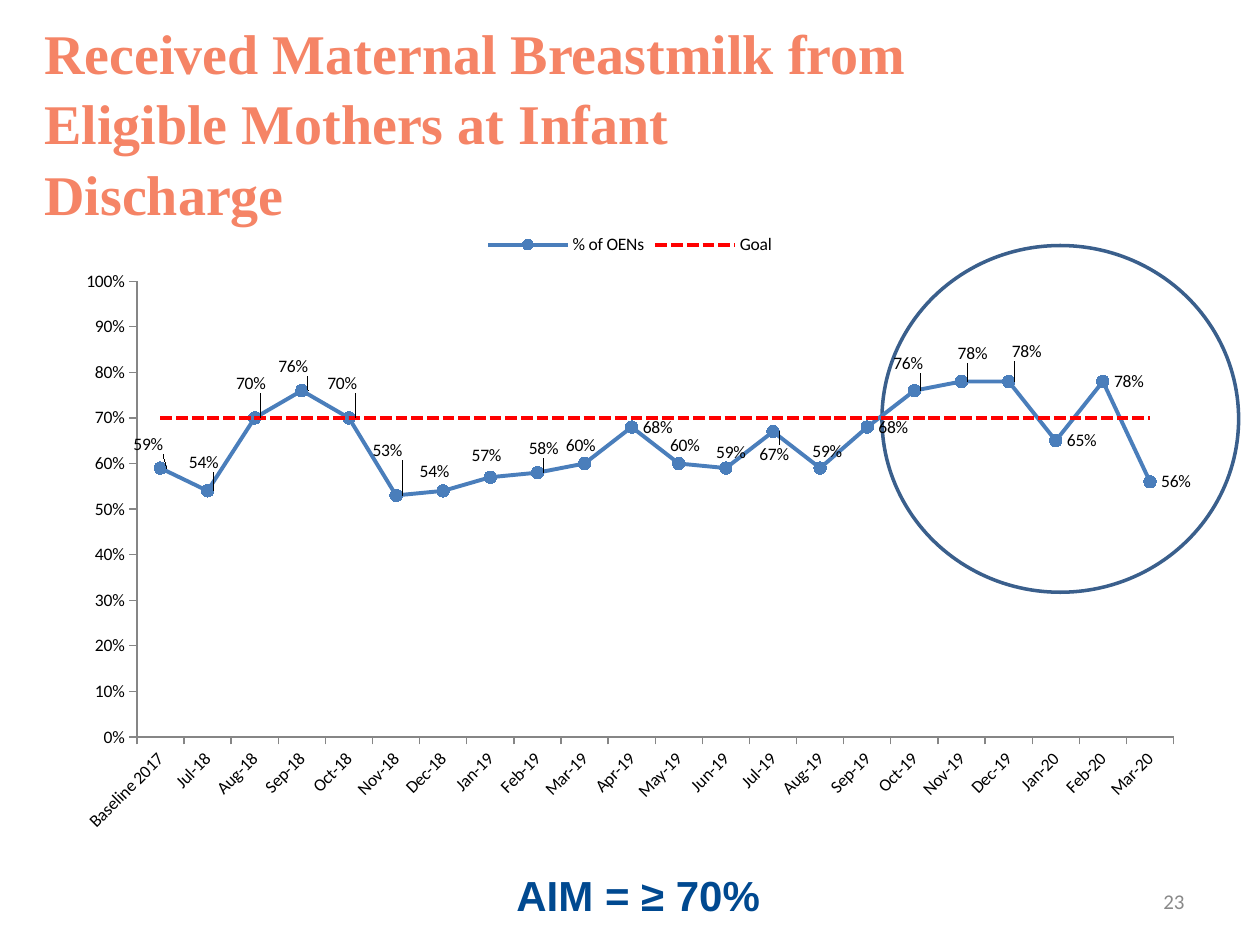
from dataclasses import dataclass

from lxml import etree
from pptx import Presentation
from pptx.chart.data import CategoryChartData
from pptx.dml.color import RGBColor
from pptx.enum.chart import (XL_CHART_TYPE, XL_LABEL_POSITION, XL_LEGEND_POSITION,
                             XL_MARKER_STYLE, XL_TICK_MARK)
from pptx.enum.dml import MSO_LINE
from pptx.enum.shapes import MSO_SHAPE
from pptx.enum.text import MSO_ANCHOR, MSO_AUTO_SIZE, PP_ALIGN
from pptx.oxml.ns import qn
from pptx.util import Cm, Pt

LINE_MARKERS = XL_CHART_TYPE.LINE_MARKERS
LABEL_RIGHT = XL_LABEL_POSITION.RIGHT
LEGEND_TOP = XL_LEGEND_POSITION.TOP
CIRCLE, NO_MARKER = XL_MARKER_STYLE.CIRCLE, XL_MARKER_STYLE.NONE
TICK_OUTSIDE = XL_TICK_MARK.OUTSIDE
DASHED = MSO_LINE.SQUARE_DOT
ELLIPSE = MSO_SHAPE.OVAL
MIDDLE, TOP = MSO_ANCHOR.MIDDLE, MSO_ANCHOR.TOP
LEFT, RIGHT = PP_ALIGN.LEFT, PP_ALIGN.RIGHT
NO_AUTOFIT = MSO_AUTO_SIZE.NONE

COLORS = {"title": "F58466", "aim": "004990", "number": "898989", "ring": "3A5F8C",
          "line": "4A7EBB", "marker": "4F81BD", "goal": "FF0000",
          "axis": "868686", "text": "000000"}

MONTHS = "Jan Feb Mar Apr May Jun Jul Aug Sep Oct Nov Dec".split()
# July 2018 to March 2020
CATEGORIES = ["Baseline 2017"] + [
    f"{MONTHS[index % 12]}-{18 + index // 12}" for index in range(6, 27)]
PERCENTAGES = [59, 54, 70, 76, 70, 53, 54, 57, 58, 60, 68,
               60, 59, 67, 59, 68, 76, 78, 78, 65, 78, 56]
GOAL = 0.7

# Labels moved from their place right of the point: (right, down) in cm
LABEL_SHIFTS = {
    0: (-0.77, -0.48), 1: (-0.6, -0.58), 2: (-0.6, -0.7), 3: (-0.7, -0.48),
    4: (-0.66, -0.7), 5: (-0.7, -0.9), 6: (-0.7, -0.38), 7: (-0.6, -0.44),
    8: (-0.4, -0.48), 9: (-0.6, -0.36), 11: (-0.4, -0.36), 12: (-0.42, -0.32),
    13: (-0.5, 0.46), 14: (-0.38, -0.34), 16: (-0.65, -0.54), 17: (-0.3, -0.56),
    18: (-0.16, -0.6)}


@dataclass
class Box:
    """Position and size in centimetres."""
    left: float
    top: float
    width: float
    height: float

    def lengths(self):
        return Cm(self.left), Cm(self.top), Cm(self.width), Cm(self.height)


@dataclass
class TextStyle:
    font: str
    size: float
    color: str
    bold: bool = False
    alignment: int = LEFT
    anchor: int = TOP
    line_spacing: float = 1.0


CHART_BOX = Box(1.27, 4.45, 22.86, 12.57)
PLOT_BOX = Box(1.49, 1.22, 20.9, 9.19)  # measured inside the chart


def rgb(name: str) -> RGBColor:
    return RGBColor.from_string(COLORS[name])


def write_text(shape, text: str, style: TextStyle) -> None:
    frame = shape.text_frame
    frame.text = text
    frame.word_wrap = True
    frame.auto_size = NO_AUTOFIT
    frame.vertical_anchor = style.anchor
    paragraph = frame.paragraphs[0]
    paragraph.alignment = style.alignment
    paragraph.line_spacing = style.line_spacing
    font = paragraph.runs[0].font
    font.name, font.size, font.bold = style.font, Pt(style.size), style.bold
    font.color.rgb = rgb(style.color)


def add_text(slide, box: Box, text: str, style: TextStyle) -> None:
    write_text(slide.shapes.add_textbox(*box.lengths()), text, style)


def make_layout(**settings) -> etree.Element:
    """Build a manual chart layout from its settings, in schema order."""
    layout = etree.Element(qn("c:layout"))
    manual = etree.SubElement(layout, qn("c:manualLayout"))
    for name, value in settings.items():
        etree.SubElement(manual, qn(f"c:{name}")).set("val", str(value))
    return layout


def place_plot(chart) -> None:
    plot_area = chart.element.xpath("//c:plotArea")[0]
    for old_layout in plot_area.findall(qn("c:layout")):
        plot_area.remove(old_layout)
    plot_area.insert(0, make_layout(
        layoutTarget="inner", xMode="edge", yMode="edge",
        x=PLOT_BOX.left / CHART_BOX.width, y=PLOT_BOX.top / CHART_BOX.height,
        w=PLOT_BOX.width / CHART_BOX.width, h=PLOT_BOX.height / CHART_BOX.height))


def style_axes(chart) -> None:
    for axis in (chart.category_axis, chart.value_axis):
        axis.has_major_gridlines = False
        axis.major_tick_mark = TICK_OUTSIDE
        axis.format.line.color.rgb = rgb("axis")
        axis.format.line.width = Pt(0.75)
        axis.tick_labels.font.size = Pt(10)
    value_axis = chart.value_axis
    value_axis.minimum_scale, value_axis.maximum_scale = 0, 1
    value_axis.major_unit = 0.1
    value_axis.tick_labels.number_format = "0%"
    value_axis.tick_labels.number_format_is_linked = False
    category_body = chart.element.xpath("//c:catAx/c:txPr/a:bodyPr")[0]
    category_body.set("rot", "-2700000")


def style_line(series, color: str) -> None:
    series.smooth = False
    series.format.line.color.rgb = rgb(color)
    series.format.line.width = Pt(2.25)


def label_points(chart, series) -> None:
    labels = series.data_labels
    labels.show_value = True
    labels.number_format = "0%"
    labels.number_format_is_linked = False
    labels.position = LABEL_RIGHT
    for index in LABEL_SHIFTS:
        series.points[index].data_label.position = LABEL_RIGHT
    for label in chart.element.xpath("//c:dLbl"):
        index = label.find(qn("c:idx"))
        right, down = LABEL_SHIFTS[int(index.get("val"))]
        index.addnext(make_layout(x=right / CHART_BOX.width,
                                  y=down / CHART_BOX.height))


def add_line_chart(slide) -> None:
    data = CategoryChartData(number_format="0%")
    data.categories = CATEGORIES
    data.add_series("% of OENs", [value / 100 for value in PERCENTAGES])
    data.add_series("Goal", [GOAL] * len(CATEGORIES))
    chart = slide.shapes.add_chart(LINE_MARKERS, *CHART_BOX.lengths(), data).chart
    chart.has_title = False
    chart.font.name, chart.font.size = "Calibri", Pt(10)
    chart.font.color.rgb = rgb("text")
    chart.has_legend = True
    chart.legend.position = LEGEND_TOP
    chart.legend.include_in_layout = False
    chart.plots[0].vary_by_categories = False
    style_axes(chart)
    place_plot(chart)

    rate, goal = chart.plots[0].series
    style_line(rate, "line")
    rate.marker.style, rate.marker.size = CIRCLE, 7
    rate.marker.format.fill.solid()
    rate.marker.format.fill.fore_color.rgb = rgb("marker")
    rate.marker.format.line.color.rgb = rgb("line")
    label_points(chart, rate)
    style_line(goal, "goal")
    goal.format.line.dash_style = DASHED
    goal.marker.style = NO_MARKER


def main() -> None:
    presentation = Presentation()
    presentation.slide_width, presentation.slide_height = Cm(25.4), Cm(19.05)
    slide = presentation.slides.add_slide(presentation.slide_layouts[5])

    # Title
    title = slide.shapes.title
    title.left, title.top, title.width, title.height = Box(
        0.64, 0.84, 17.98, 3.18).lengths()
    write_text(title, "Received Maternal Breastmilk from Eligible Mothers at Infant Discharge",
               TextStyle("Times New Roman", 32, "title", True, anchor=MIDDLE,
                         line_spacing=1.05))

    # Slide number and aim
    add_text(slide, Box(18.21, 17.65, 5.92, 1.02), "23",
             TextStyle("Calibri", 12, "number", alignment=RIGHT, anchor=MIDDLE))
    add_text(slide, Box(10.16, 17.4, 6.25, 1.27), "AIM = ≥ 70%",
             TextStyle("Arial", 24, "aim", True))

    # Ring around the latest months
    ring = slide.shapes.add_shape(ELLIPSE, *Box(17.78, 4.95, 7.19, 6.99).lengths())
    ring.shadow.inherit = False
    ring.fill.background()
    ring.line.color.rgb = rgb("ring")
    ring.line.width = Pt(2)

    add_line_chart(slide)
    presentation.save("out.pptx")


if __name__ == "__main__":
    main()
